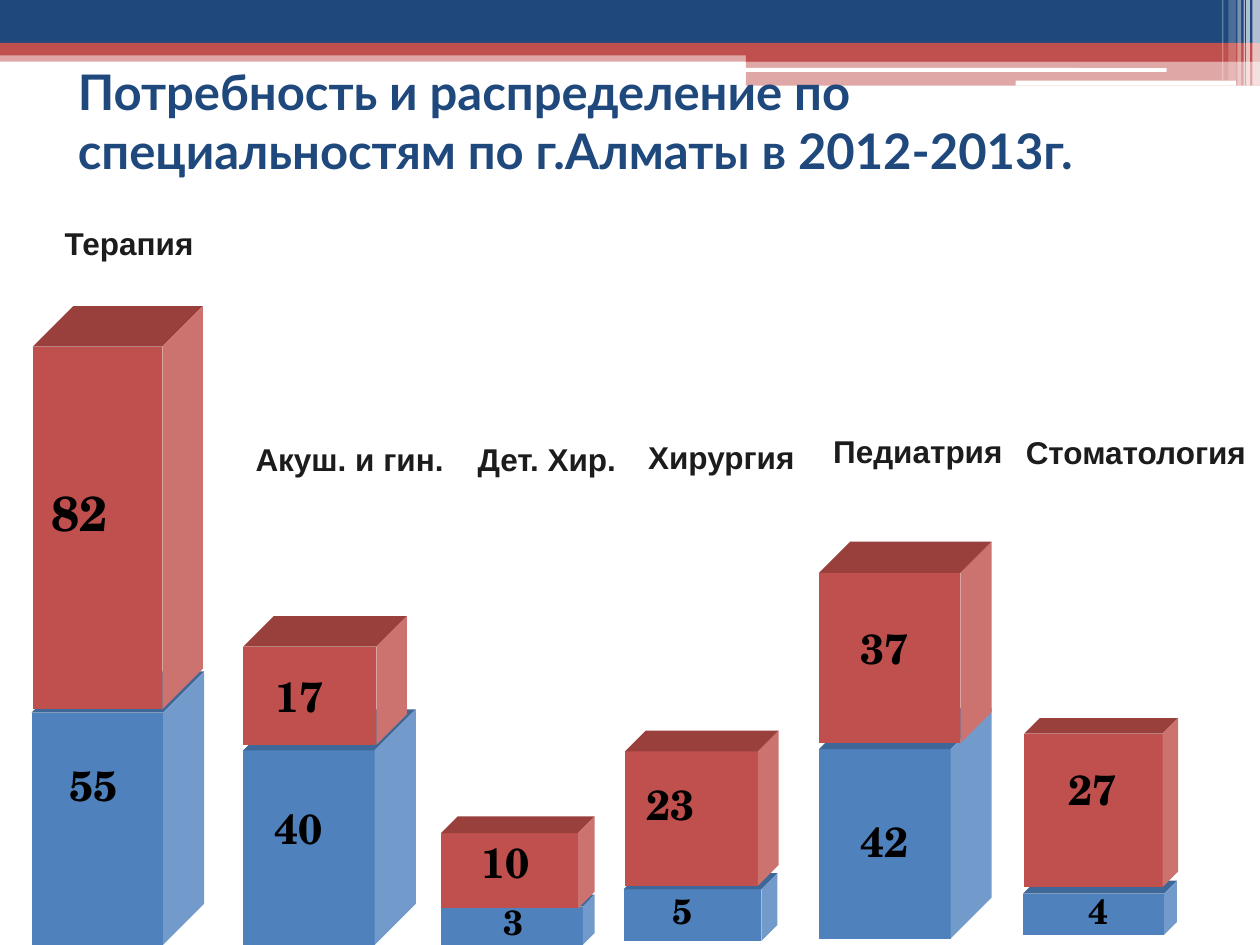
from dataclasses import dataclass

from lxml import etree
from pptx import Presentation
from pptx.dml.color import RGBColor
from pptx.enum.shapes import MSO_SHAPE
from pptx.enum.text import MSO_ANCHOR, PP_ALIGN
from pptx.oxml.ns import qn
from pptx.util import Inches, Pt

RECTANGLE = MSO_SHAPE.RECTANGLE
ROUNDED = MSO_SHAPE.ROUNDED_RECTANGLE
CUBE = MSO_SHAPE.CUBE
LEFT, CENTER = PP_ALIGN.LEFT, PP_ALIGN.CENTER
TOP, MIDDLE = MSO_ANCHOR.TOP, MSO_ANCHOR.MIDDLE

COLUMNS, ROWS = 10, 7.5
CELL = Inches(1)
COLORS = {
    "navy": "1F497D",
    "red": "C0504D",
    "blue": "4F81BD",
    "white": "FFFFFF",
    "label": "1C1C1C",
    "black": "000000",
}
NUMBER_FONT = "TeX Gyre Schola"
LABEL_FONT = "Arial"
TITLE_FONT = "Lato"


@dataclass(frozen=True)
class Box:
    column: float
    row: float
    width: float
    height: float

    def emu(self) -> list[int]:
        return [round(v * CELL) for v in (self.column, self.row, self.width, self.height)]

    def quarter_turned(self) -> "Box":
        shift = (self.width - self.height) / 2
        return Box(self.column + shift, self.row - shift, self.height, self.width)


@dataclass(frozen=True)
class Band:
    box: Box
    color: str
    opacity: int = 100
    kind: int = RECTANGLE


@dataclass(frozen=True)
class Part:
    box: Box
    depth: float
    value: str
    value_box: Box
    size: int = 24


@dataclass(frozen=True)
class Specialty:
    name: str
    name_box: Box
    lower: Part
    upper: Part


BANDS = [
    Band(Box(0, 0.4, COLUMNS, 0.09), "red", 50),
    Band(Box(0, 0, COLUMNS, 0.34), "navy"),
    Band(Box(0, 0.34, COLUMNS, 0.1), "red"),
    Band(Box(5.92, 0.39, 4.08, 0.1), "red"),
    Band(Box(5.92, 0.48, 4.08, 0.2), "red", 50),
    Band(Box(5.91, 0.54, 3.35, 0.03), "white", kind=ROUNDED),
    Band(Box(8.06, 0.64, 1.75, 0.04), "white", kind=ROUNDED),
] + [
    Band(Box(column, 0, width, height), "white", opacity)
    for column, width, height, opacity in [
        (9.94, 0.06, 0.68, 65),
        (9.89, 0.03, 0.68, 65),
        (9.87, 0.01, 0.68, 60),
        (9.82, 0.03, 0.68, 40),
        (9.75, 0.06, 0.64, 20),
        (9.7, 0.01, 0.64, 30),
    ]
]

SPECIALTIES = [
    Specialty("Терапия", Box(0.41, 1.73, 1.23, 0.4),
              Part(Box(0.25, 5.33, 1.37, 2.17), 0.238, "55", Box(0.45, 5.98, 0.66, 0.5)),
              Part(Box(0.26, 2.43, 1.35, 3.2), 0.238, "82", Box(0.31, 3.78, 0.8, 0.57), 28)),
    Specialty("Акуш. и гин.", Box(1.81, 3.44, 1.93, 0.4),
              Part(Box(1.93, 5.63, 1.37, 1.87), 0.238, "40", Box(2.08, 6.32, 0.71, 0.5)),
              Part(Box(1.93, 4.89, 1.3, 1.02), 0.238, "17", Box(2.09, 5.27, 0.69, 0.5))),
    Specialty("Дет. Хир.", Box(3.52, 3.44, 1.64, 0.4),
              Part(Box(3.5, 7.1, 1.22, 0.4), 0.238, "3", Box(3.9, 7.1, 0.43, 0.44), 20),
              Part(Box(3.5, 6.48, 1.22, 0.73), 0.181, "10", Box(3.72, 6.59, 0.78, 0.5))),
    Specialty("Хирургия", Box(5.02, 3.43, 1.41, 0.4),
              Part(Box(4.95, 6.93, 1.22, 0.54), 0.238, "5", Box(5.24, 7.01, 0.47, 0.44), 20),
              Part(Box(4.96, 5.8, 1.22, 1.23), 0.135, "23", Box(5.03, 6.13, 0.9, 0.5))),
    Specialty("Педиатрия", Box(6.5, 3.38, 1.57, 0.4),
              Part(Box(6.5, 5.62, 1.37, 1.83), 0.238, "42", Box(6.73, 6.42, 0.63, 0.5)),
              Part(Box(6.5, 4.3, 1.37, 1.6), 0.181, "37", Box(6.73, 4.89, 0.63, 0.5))),
    Specialty("Стоматология", Box(8.03, 3.39, 1.97, 0.4),
              Part(Box(8.12, 6.99, 1.22, 0.43), 0.238, "4", Box(8.54, 7.01, 0.39, 0.44), 20),
              Part(Box(8.13, 5.7, 1.22, 1.34), 0.101, "27", Box(8.38, 6.01, 0.71, 0.5))),
]


def add_filled(slide, kind: int, box: Box, color: str):
    shape = slide.shapes.add_shape(kind, *box.emu())
    shape.shadow.inherit = False
    shape.fill.solid()
    shape.fill.fore_color.rgb = RGBColor.from_string(COLORS[color])
    shape.line.fill.background()
    return shape


def add_band(slide, band: Band) -> None:
    shape = add_filled(slide, band.kind, band.box, band.color)
    if band.opacity < 100:
        color = shape._element.spPr.find(qn("a:solidFill"))[0]
        etree.SubElement(color, qn("a:alpha"), val=str(band.opacity * 1000))


def add_cube(slide, part: Part, color: str) -> None:
    shape = add_filled(slide, CUBE, part.box.quarter_turned(), color)
    shape.adjustments[0] = part.depth
    shape.rotation = 270
    shape._element.spPr.find(qn("a:xfrm")).set("flipV", "1")


def add_text(slide, text: str, box: Box, font: str, size: int, color: str,
             align: int = LEFT, anchor: int = TOP, wrap: bool = True) -> None:
    frame = slide.shapes.add_textbox(*box.emu()).text_frame
    frame.word_wrap = wrap
    frame.vertical_anchor = anchor
    paragraph = frame.paragraphs[0]
    paragraph.alignment = align
    run = paragraph.add_run()
    run.text = text
    run.font.name = font
    run.font.size = Pt(size)
    run.font.bold = True
    run.font.color.rgb = RGBColor.from_string(COLORS[color])


def add_specialty(slide, specialty: Specialty) -> None:
    parts = [(specialty.lower, "blue"), (specialty.upper, "red")]
    for part, color in parts:
        add_cube(slide, part, color)
    for part, _ in parts:
        add_text(slide, part.value, part.value_box, NUMBER_FONT, part.size, "black")
    add_text(slide, specialty.name, specialty.name_box, LABEL_FONT, 18, "label",
             align=CENTER, wrap=False)


def main() -> None:
    presentation = Presentation()
    presentation.slide_width = round(COLUMNS * CELL)
    presentation.slide_height = round(ROWS * CELL)
    slide = presentation.slides.add_slide(presentation.slide_layouts[6])
    for band in BANDS:
        add_band(slide, band)
    add_text(slide, "Потребность и распределение по специальностям по г.Алматы в 2012-2013г.",
             Box(0.52, 0.76, 9, 0.39), TITLE_FONT, 28, "navy", anchor=MIDDLE)
    for specialty in SPECIALTIES:
        add_specialty(slide, specialty)
    presentation.save("out.pptx")


if __name__ == "__main__":
    main()
